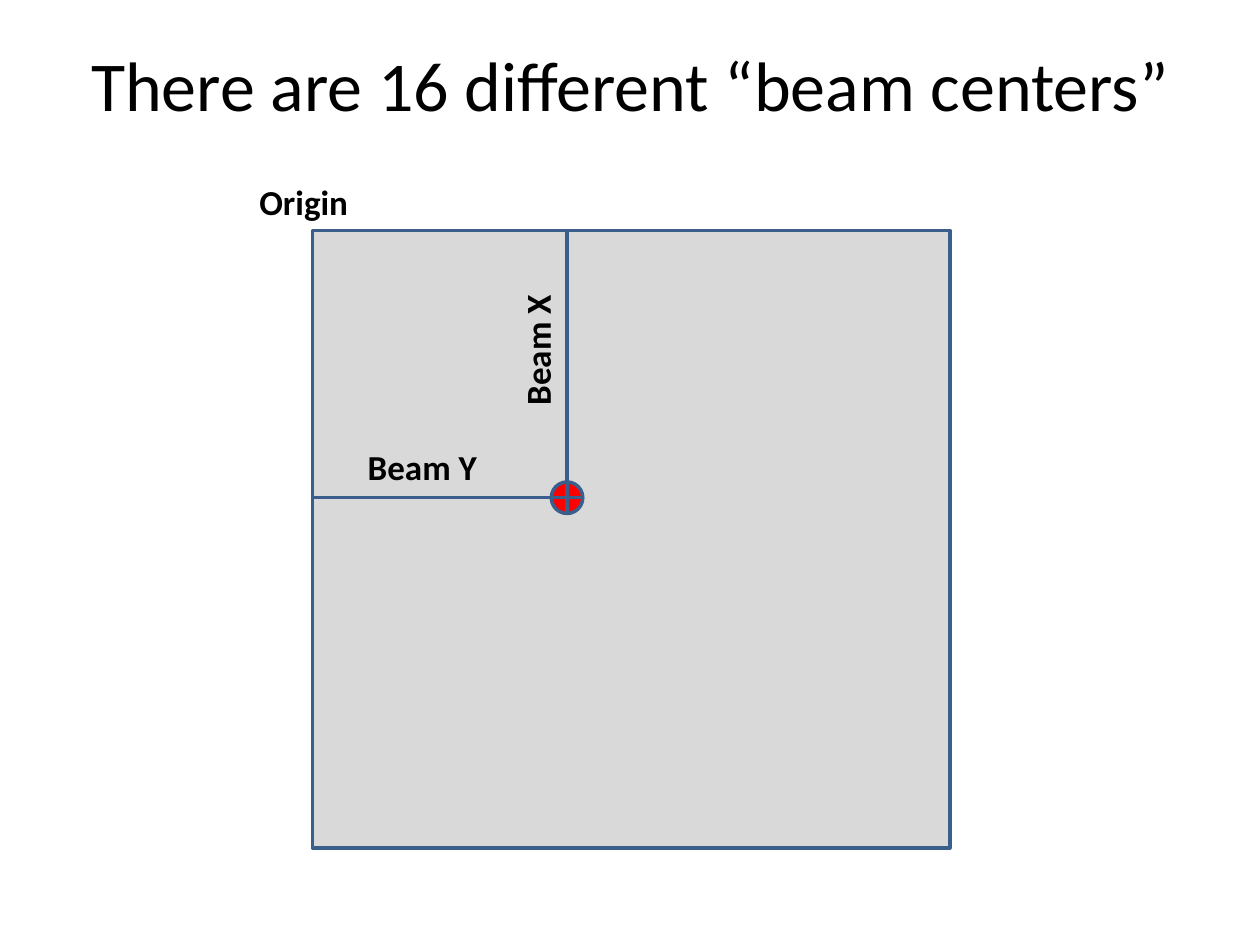
"""Build the slide showing a beam center measured from the detector origin."""
from pptx import Presentation
from pptx.dml.color import RGBColor
from pptx.enum.shapes import MSO_SHAPE as SHAPE
from pptx.enum.text import MSO_ANCHOR as ANCHOR, MSO_AUTO_SIZE as FIT, PP_ALIGN as ALIGN
from pptx.util import Inches, Pt

COLORS = {"text": "000000", "panel": "D9D9D9", "beam": "FF0000", "line": "3A5F8C"}
FONT = "Calibri"

prs = Presentation()
prs.slide_width, prs.slide_height = Inches(10), Inches(7.5)
s = prs.slides.add_slide(prs.slide_layouts[5])


def rgb(name):
    return RGBColor.from_string(COLORS[name])


def set_text(sp, text, size, bold, align):
    tf = sp.text_frame
    tf.text = text
    p = tf.paragraphs[0]
    p.alignment = align
    font = p.runs[0].font
    font.name, font.size, font.bold = FONT, Pt(size), bold
    font.color.rgb = rgb("text")


title = s.shapes.title
title.left, title.top = 0, 0
title.width, title.height = prs.slide_width, Inches(1.32)
title.text_frame.vertical_anchor = ANCHOR.MIDDLE
set_text(title, "There are 16 different “beam centers”", 40, False, ALIGN.CENTER)

left, top = 2.48, 1.83
beam_y, beam_x = 2.02, 2.12
spot = 0.25
shapes = [
    (SHAPE.RECTANGLE, left, top, 5.06, 4.9, "panel"),
    (SHAPE.RECTANGLE, left, top, beam_y, beam_x, "panel"),
    (SHAPE.FLOWCHART_OR, left + beam_y - spot / 2, top + beam_x - spot / 2, spot, spot, "beam"),
]
for kind, x, y, w, h, fill in shapes:
    sp = s.shapes.add_shape(kind, Inches(x), Inches(y), Inches(w), Inches(h))
    sp.shadow.inherit = False
    sp.fill.solid()
    sp.fill.fore_color.rgb = rgb(fill)
    sp.line.color.rgb = rgb("line")
    sp.line.width = Pt(2)

labels = [
    ("Origin", 1.96, 1.38, 1.03, 0),
    ("Beam Y", 2.82, 3.49, 1.08, 0),
    ("Beam X", 3.72, 2.55, 1.09, 270),
]
for text, x, y, w, angle in labels:
    sp = s.shapes.add_textbox(Inches(x), Inches(y), Inches(w), Inches(0.44))
    sp.rotation = angle
    sp.text_frame.word_wrap = False
    sp.text_frame.auto_size = FIT.SHAPE_TO_FIT_TEXT
    set_text(sp, text, 20, True, ALIGN.LEFT)

prs.save("out.pptx")
